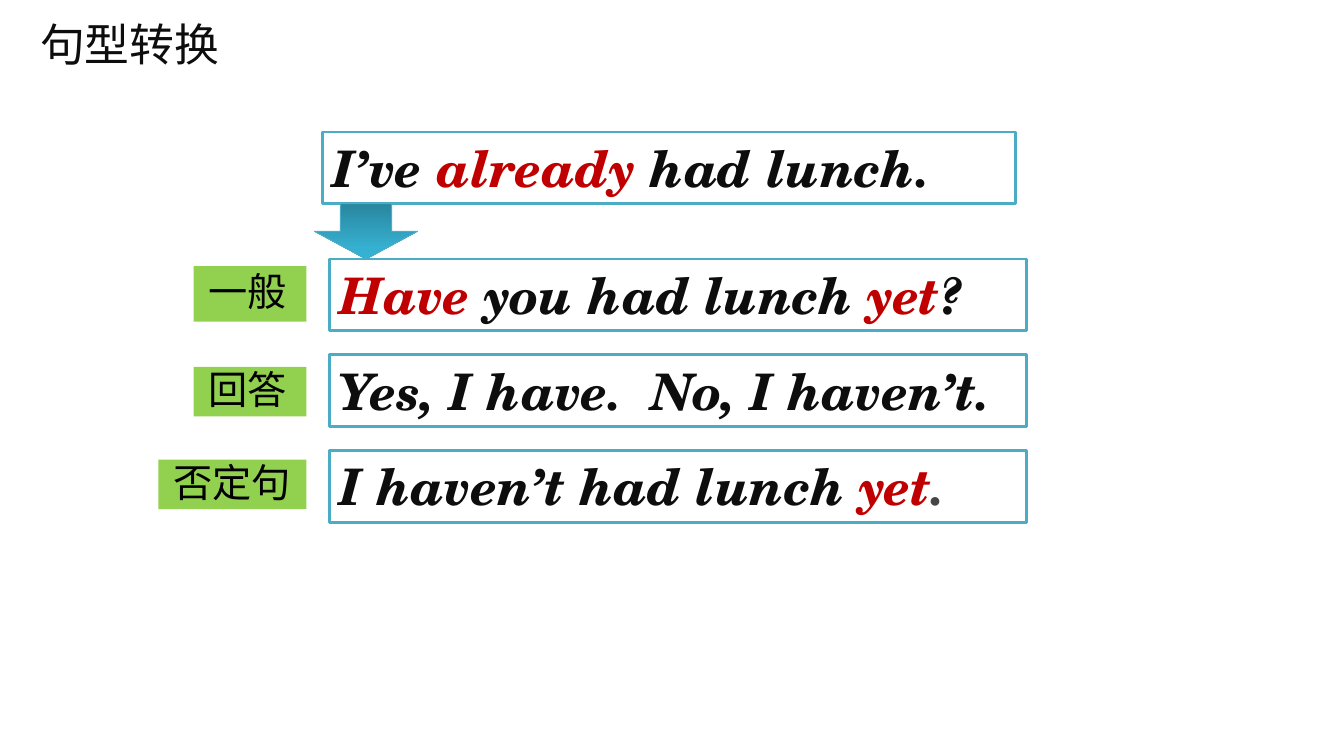
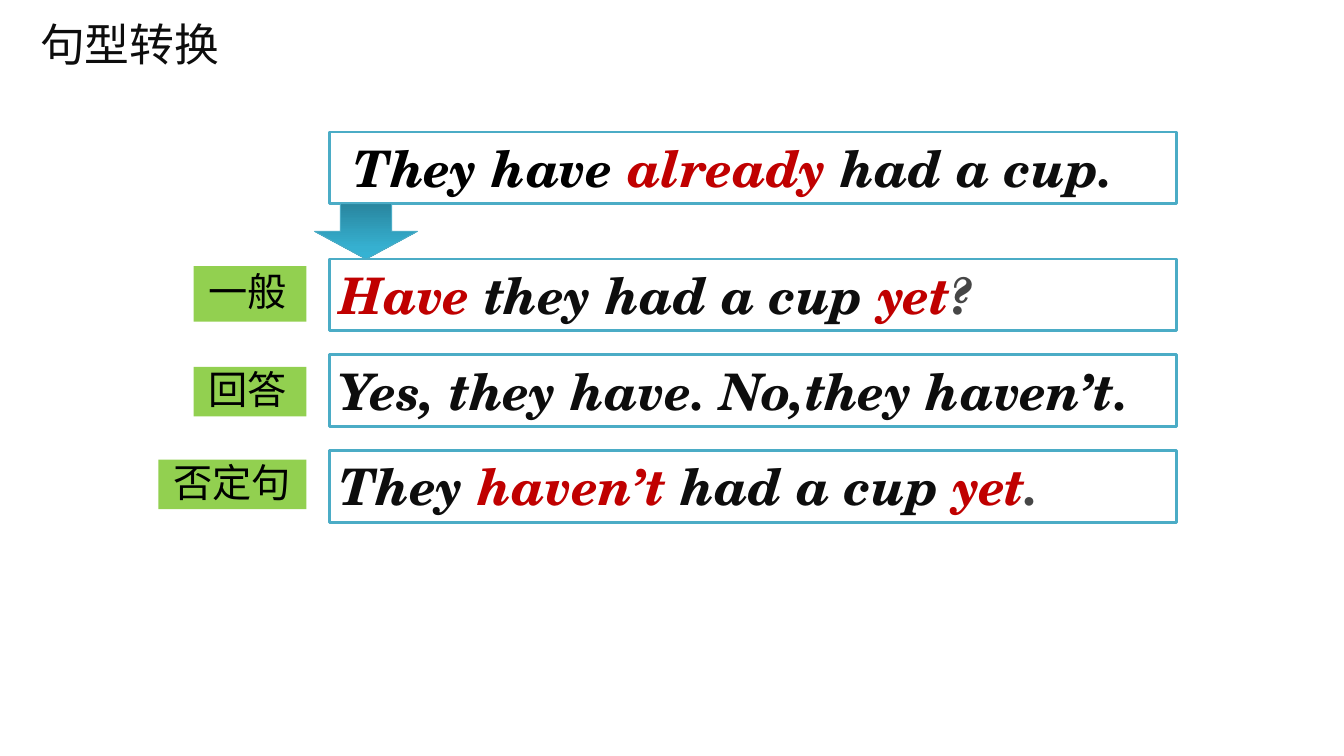
import pptx
import pptx.dml.color
import pptx.enum.shapes
import pptx.enum.text
import pptx.oxml
import pptx.oxml.ns
import pptx.util
from pptx.util import Inches

INK, BLACK, RED, GREY = "0D0D0D", "000000", "C00000", "464646"
WHITE, TEAL, GREEN = "FFFFFF", "4BACC6", "92D050"
ARROW_STOPS = [(0, "29869F"), (80, "36B0D0"), (100, "33B3D5")]
SERIF, SANS, CHINESE = "TeX Gyre Schola", "Arial", "Noto Sans CJK SC"

TITLE = "句型转换"
# text, left, top, width, height
LABELS = [
    ("一般", 1.92, 2.64, 1.12, 0.55),
    ("回答", 1.92, 3.64, 1.12, 0.49),
    ("否定句", 1.57, 4.56, 1.47, 0.49),
]
SLIDES = [
    {
        "statement": [("I’ve ", INK), ("already ", RED), ("had lunch.", INK)],
        "statement_place": (3.2, 6.87),
        "statement_indent": 0,
        "answer_width": 6.91,
        "answers": [
            [("Have ", RED), ("you had lunch ", INK), ("yet", RED), ("?", INK)],
            [("Yes, I have.  No, I haven’t.", INK)],
            [("I haven’t had lunch ", INK), ("yet", RED), (".", GREY)],
        ],
    },
    {
        "statement": [("They have ", BLACK), ("already ", RED), ("had a cup.", INK)],
        "statement_place": (3.27, 8.4),
        "statement_indent": 0.14,
        "answer_width": 8.4,
        "answers": [
            [("Have ", RED), ("they had a cup ", INK), ("yet", RED), ("?", GREY)],
            [("Yes, they have. No,they haven’t.", INK)],
            [("They ", INK), ("haven’t ", RED), ("had a cup ", INK),
             ("yet", RED), (".", GREY)],
        ],
    },
]

STATEMENT_TOP, ANSWER_LEFT, ANSWER_TOP, ANSWER_PITCH = 1.31, 3.27, 2.57, 0.95
SENTENCE_HEIGHT = 0.71


def rgb(code):
    return pptx.dml.color.RGBColor.from_string(code)


def add_spans(para, spans, font_name, size, emphasis=False):
    for text, color in spans:
        span = para.add_run()
        span.text = text
        font = span.font
        font.name, font.size = font_name, pptx.util.Pt(size)
        font.bold = font.italic = emphasis
        font.color.rgb = rgb(color)
        east_asian = pptx.oxml.parse_xml(
            f'<a:ea {pptx.oxml.ns.nsdecls("a")} typeface="{font_name}"/>')
        span.font._element.find(pptx.oxml.ns.qn("a:latin")).addnext(east_asian)


def add_rectangle(page, place, fill, line=None):
    box = page.shapes.add_shape(pptx.enum.shapes.MSO_SHAPE.RECTANGLE,
                                *map(Inches, place))
    box.shadow.inherit = False
    box.fill.solid()
    box.fill.fore_color.rgb = rgb(fill)
    if line:
        box.line.color.rgb = rgb(line)
        box.line.width = pptx.util.Pt(2)
    else:
        box.line.fill.background()
    box.text_frame.word_wrap = True
    box.text_frame.paragraphs[0].alignment = pptx.enum.text.PP_ALIGN.LEFT
    return box


def add_title(page):
    box = page.shapes.add_textbox(*map(Inches, (0.3, 0.12, 6.67, 0.64)))
    box.text_frame.word_wrap = True
    add_spans(box.text_frame.paragraphs[0], [(TITLE, INK)], CHINESE, 32)


def add_sentence(page, spans, left, top, width, indent=0):
    box = add_rectangle(page, (left, top, width, SENTENCE_HEIGHT), WHITE, TEAL)
    frame = box.text_frame
    frame.vertical_anchor = pptx.enum.text.MSO_ANCHOR.TOP
    frame.margin_left = Inches(0.1 + indent)
    add_spans(frame.paragraphs[0], spans, SERIF, 36, emphasis=True)


def add_label(page, text, *place):
    frame = add_rectangle(page, place, GREEN).text_frame
    frame.vertical_anchor = pptx.enum.text.MSO_ANCHOR.MIDDLE
    frame.margin_left = frame.margin_right = Inches(0.15)
    frame.margin_top = frame.margin_bottom = Inches(0.15)
    para = frame.paragraphs[0]
    para.line_spacing = 0.9
    para.space_after = pptx.util.Pt(10)
    add_spans(para, [(text, BLACK)], SANS, 28)


def add_arrow(page):
    top = STATEMENT_TOP + SENTENCE_HEIGHT
    arrow = page.shapes.add_shape(
        pptx.enum.shapes.MSO_SHAPE.DOWN_ARROW,
        *map(Inches, (3.12, top, 1.02, ANSWER_TOP - top)))
    arrow.shadow.inherit = False
    arrow.line.color.rgb = rgb(TEAL)
    arrow.line.width = pptx.util.Pt(0.75)
    arrow.fill.gradient()
    arrow.fill.gradient_angle = 270
    stops = next(arrow._element.iter(pptx.oxml.ns.qn("a:gsLst")))
    for stop in list(stops):
        stops.remove(stop)
    for percent, color in ARROW_STOPS:
        stops.append(pptx.oxml.parse_xml(
            f'<a:gs {pptx.oxml.ns.nsdecls("a")} pos="{percent * 1000}">'
            f'<a:srgbClr val="{color}"/></a:gs>'))


def build_page(deck, content):
    page = deck.slides.add_slide(deck.slide_layouts[6])
    left, width = content["statement_place"]
    add_sentence(page, content["statement"], left, STATEMENT_TOP, width,
                 content["statement_indent"])
    for row, spans in enumerate(content["answers"]):
        add_sentence(page, spans, ANSWER_LEFT, ANSWER_TOP + row * ANSWER_PITCH,
                     content["answer_width"])
    for label in LABELS:
        add_label(page, *label)
    add_arrow(page)
    add_title(page)


def main():
    deck = pptx.Presentation()
    deck.slide_width, deck.slide_height = Inches(13.33), Inches(7.5)
    for content in SLIDES:
        build_page(deck, content)
    deck.save("out.pptx")


if __name__ == "__main__":
    main()
